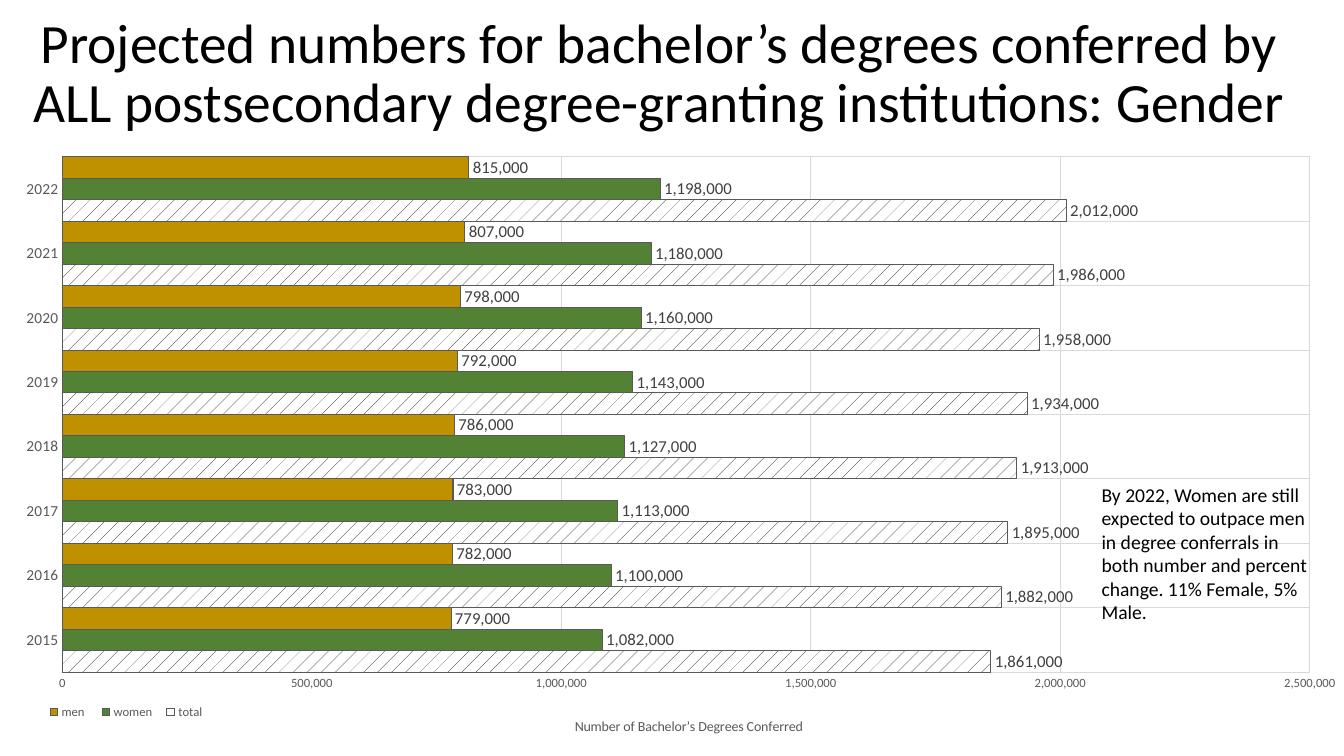
"""Build a slide charting projected bachelor's degrees by gender."""
from lxml import etree
from pptx import Presentation
from pptx.chart.data import CategoryChartData
from pptx.dml.color import RGBColor
from pptx.enum.chart import (XL_CHART_TYPE, XL_LABEL_POSITION,
                             XL_LEGEND_POSITION, XL_TICK_MARK)
from pptx.enum.dml import MSO_PATTERN
from pptx.enum.text import MSO_ANCHOR, PP_ALIGN
from pptx.oxml.ns import qn
from pptx.util import Cm, Pt

HEADING = ("Projected numbers for bachelor’s degrees conferred by "
           "ALL postsecondary degree-granting institutions: Gender")
REMARK = ("By 2022, Women are still expected to outpace men in degree conferrals "
          "in both number and percent change. 11% Female, 5% Male.")
AXIS_CAPTION = "Number of Bachelor’s Degrees Conferred"
YEARS = [str(year) for year in range(2015, 2023)]
DEGREES = {
    "total": (1861000, 1882000, 1895000, 1913000, 1934000, 1958000, 1986000, 2012000),
    "women": (1082000, 1100000, 1113000, 1127000, 1143000, 1160000, 1180000, 1198000),
    "men ": (779000, 782000, 783000, 786000, 792000, 798000, 807000, 815000),
}

FONT = "Calibri"
BLACK = RGBColor(0x00, 0x00, 0x00)
WHITE = RGBColor(0xFF, 0xFF, 0xFF)
GREEN = RGBColor(0x54, 0x82, 0x35)
GOLD = RGBColor(0xBF, 0x90, 0x00)
DARK_GRAY = RGBColor(0x40, 0x40, 0x40)
GRAY = RGBColor(0x59, 0x59, 0x59)
LIGHT_GRAY = RGBColor(0xD9, 0xD9, 0xD9)
BAR_COLORS = {"women": GREEN, "men ": GOLD}

BAR_CLUSTERED = XL_CHART_TYPE.BAR_CLUSTERED
OUTSIDE_END = XL_LABEL_POSITION.OUTSIDE_END
LEGEND_BOTTOM = XL_LEGEND_POSITION.BOTTOM
NO_TICK = XL_TICK_MARK.NONE
DOTTED = MSO_PATTERN.PERCENT_5
MIDDLE, TOP = MSO_ANCHOR.MIDDLE, MSO_ANCHOR.TOP
CENTER, LEFT = PP_ALIGN.CENTER, PP_ALIGN.LEFT


def set_font(font, size, color):
    font.name, font.size, font.bold = FONT, Pt(size), False
    font.color.rgb = color


def set_line(line, color):
    line.color.rgb = color
    line.width = Pt(0.75)


def place(part, index, **settings):
    for old in part.findall(qn("c:layout")):
        part.remove(old)
    layout = etree.Element(qn("c:layout"))
    manual = etree.SubElement(layout, qn("c:manualLayout"))
    for key, value in settings.items():
        etree.SubElement(manual, qn(f"c:{key}")).set("val", str(value))
    part.insert(index, layout)


def add_text(slide, box, text, size, align, anchor, spacing):
    frame = slide.shapes.add_textbox(*map(Cm, box)).text_frame
    frame.word_wrap = True
    frame.vertical_anchor = anchor
    paragraph = frame.paragraphs[0]
    paragraph.text = text
    paragraph.alignment = align
    paragraph.line_spacing = spacing
    set_font(paragraph.font, size, BLACK)


def style_axis(axis, size):
    axis.major_tick_mark = axis.minor_tick_mark = NO_TICK
    axis.has_major_gridlines = True
    set_line(axis.major_gridlines.format.line, LIGHT_GRAY)
    set_font(axis.tick_labels.font, size, GRAY)


def style_series(series):
    fill = series.format.fill
    if series.name in BAR_COLORS:
        fill.solid()
        fill.fore_color.rgb = BAR_COLORS[series.name]
    else:
        fill.patterned()
        fill.pattern = DOTTED
        fill.fore_color.rgb, fill.back_color.rgb = BLACK, WHITE
    set_line(series.format.line, GRAY)
    labels = series.data_labels
    labels.show_value = True
    labels.position = OUTSIDE_END
    set_font(labels.font, 12, DARK_GRAY)


def add_degree_chart(slide):
    data = CategoryChartData(number_format="#,##0")
    data.categories = YEARS
    for name, values in DEGREES.items():
        data.add_series(name, values)
    box = map(Cm, (0.33, 3.94, 33.55, 14.68))
    chart = slide.shapes.add_chart(BAR_CLUSTERED, *box, data).chart
    chart.has_title = False
    set_font(chart.font, 10, BLACK)

    bars = chart.plots[0]
    bars.gap_width = bars.overlap = 0
    bars.vary_by_categories = False
    for series in bars.series:
        style_series(series)

    years, counts = chart.category_axis, chart.value_axis
    style_axis(years, 11)
    set_line(years.format.line, LIGHT_GRAY)
    style_axis(counts, 9)
    counts.format.line.fill.background()
    counts.minimum_scale, counts.maximum_scale = 0, 2500000
    counts.major_unit = 500000
    counts.tick_labels.number_format = "#,##0"
    counts.tick_labels.number_format_is_linked = False
    caption = counts.axis_title
    caption.text_frame.text = AXIS_CAPTION
    set_font(caption.text_frame.paragraphs[0].font, 10, GRAY)

    chart.has_legend = True
    legend = chart.legend
    legend.position = LEGEND_BOTTOM
    legend.include_in_layout = False
    set_font(legend.font, 9, GRAY)

    plot_area = chart.element.find(f".//{qn('c:plotArea')}")
    edges = {"xMode": "edge", "yMode": "edge"}
    place(plot_area, 0, layoutTarget="inner", **edges, x=0.037, y=0, w=0.937, h=0.891)
    place(plot_area.find(f".//{qn('c:title')}"), 1, **edges, x=0.42, y=0.965)
    place(chart.element.find(f".//{qn('c:legend')}"), 1, **edges,
          x=0.02, y=0.935, w=0.13, h=0.05)


def main():
    deck = Presentation()
    deck.slide_width, deck.slide_height = Cm(33.87), Cm(19.05)
    slide = deck.slides.add_slide(deck.slide_layouts[6])
    add_text(slide, (0, 0.3, 33.22, 3.18), HEADING, 39.6, CENTER, MIDDLE, 0.9)
    add_degree_chart(slide)
    add_text(slide, (27.51, 12.04, 5.72, 3.84), REMARK, 14, LEFT, TOP, 1.0)
    deck.save("out.pptx")


if __name__ == "__main__":
    main()
